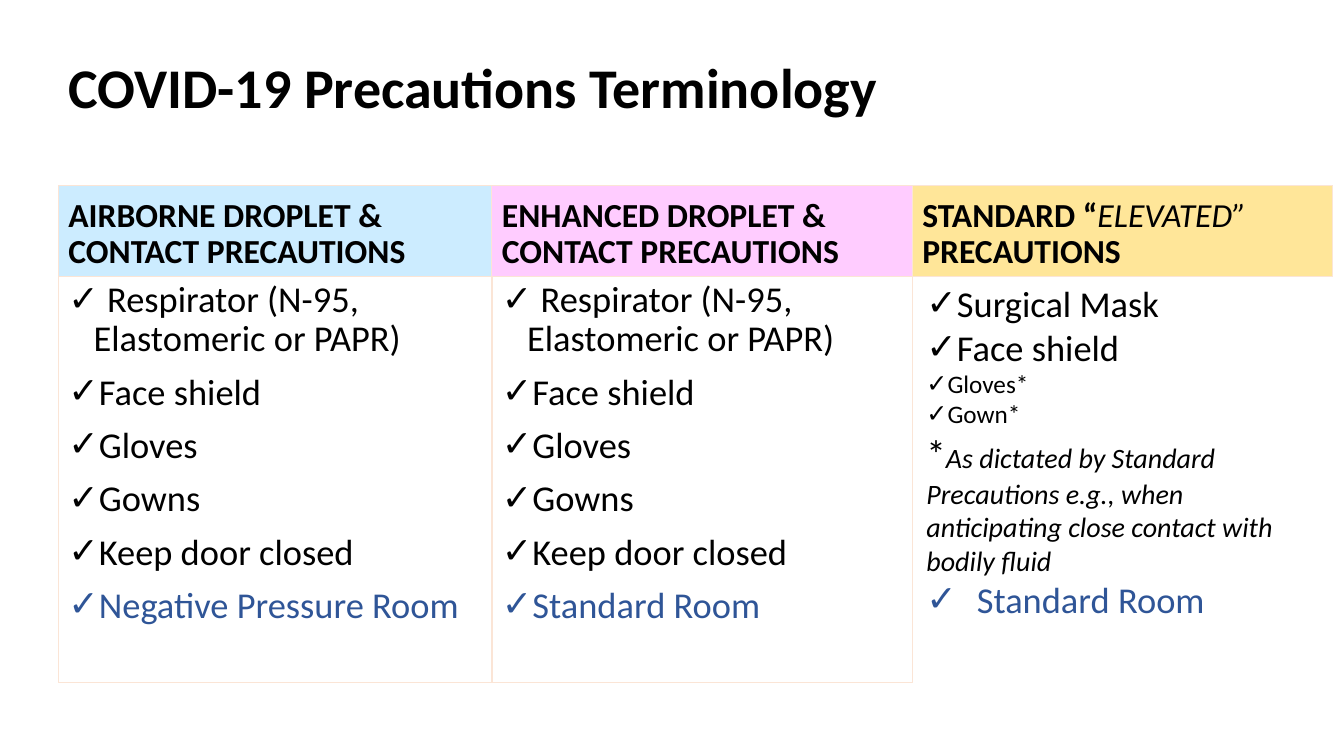
from dataclasses import dataclass

from lxml import etree
from pptx import Presentation
from pptx.dml.color import RGBColor
from pptx.enum.shapes import MSO_SHAPE
from pptx.enum.text import MSO_ANCHOR, PP_ALIGN
from pptx.oxml.ns import qn
from pptx.util import Inches, Pt

RECTANGLE = MSO_SHAPE.RECTANGLE
TOP, MIDDLE, BOTTOM = MSO_ANCHOR.TOP, MSO_ANCHOR.MIDDLE, MSO_ANCHOR.BOTTOM
LEFT = PP_ALIGN.LEFT


@dataclass(frozen=True)
class Theme:
    """Font, colours and type sizes of the slide."""
    font: str = "Calibri"
    ink: str = "000000"
    room: str = "2F5597"
    border: str = "FBE5D6"
    airborne: str = "CCECFF"
    enhanced: str = "FFCCFF"
    standard: str = "FFE699"
    title: int = 40
    heading: int = 24
    item: int = 26
    asterisk: int = 28
    note: int = 20
    minor: int = 18


THEME = Theme()
HEADING_TOP, HEADING_HEIGHT = 1.84, 0.9
LIST_TOP, LIST_HEIGHT = HEADING_TOP + HEADING_HEIGHT, 4.03
SHARED_ITEMS = [" Respirator (N-95, Elastomeric or PAPR)", "Face shield",
                "Gloves", "Gowns", "Keep door closed"]
COLUMNS = [
    (0.58, 4.31, THEME.airborne, "AIRBORNE DROPLET & CONTACT PRECAUTIONS",
     "Negative Pressure Room"),
    (4.88, 4.17, THEME.enhanced, "ENHANCED DROPLET & CONTACT PRECAUTIONS",
     "Standard Room"),
]


def add_span(para, text, size=THEME.item, color=THEME.ink, bold=False, italic=False):
    """Add formatted text to a paragraph."""
    span = para.add_run()
    span.text = text
    font = span.font
    font.name, font.size = THEME.font, Pt(size)
    font.bold, font.italic = bold, italic
    font.color.rgb = RGBColor.from_string(color)


def add_para(frame, spacing=0.9, before=10, check=False, hanging=0):
    """Add a paragraph, with a check-mark bullet if asked."""
    first = frame.paragraphs[0]
    para = frame.add_paragraph() if first.runs else first
    para.alignment = LEFT
    para.line_spacing, para.space_before = spacing, Pt(before)
    if check:
        properties = para._p.get_or_add_pPr()
        properties.set("marL", str(Inches(hanging)))
        properties.set("indent", str(-Inches(hanging)))
        etree.SubElement(properties, qn("a:buFont")).set("typeface", THEME.font)
        etree.SubElement(properties, qn("a:buChar")).set("char", "✓")
    return para


def add_text_box(page, left, top, width, height, anchor=TOP):
    """Add a wrapping text box and return its text frame."""
    frame = page.shapes.add_textbox(*map(Inches, (left, top, width, height))).text_frame
    frame.word_wrap, frame.vertical_anchor = True, anchor
    return frame


def add_cell(page, left, top, width, height, fill=None, anchor=TOP):
    """Add a bordered rectangle and return its text frame."""
    box = page.shapes.add_shape(RECTANGLE, *map(Inches, (left, top, width, height)))
    box.shadow.inherit = False
    if fill:
        box.fill.solid()
        box.fill.fore_color.rgb = RGBColor.from_string(fill)
    else:
        box.fill.background()
    box.line.color.rgb = RGBColor.from_string(THEME.border)
    box.line.width = Pt(0.75)
    box.text_frame.word_wrap, box.text_frame.vertical_anchor = True, anchor
    return box.text_frame


def add_heading(page, left, width, fill):
    """Add a column heading and return its paragraph."""
    return add_para(add_cell(page, left, HEADING_TOP, width, HEADING_HEIGHT, fill, BOTTOM))


def add_column(page, left, width, fill, heading, room):
    """Add a heading with its bordered checklist."""
    add_span(add_heading(page, left, width, fill), heading, size=THEME.heading, bold=True)
    frame = add_cell(page, left, LIST_TOP, width, LIST_HEIGHT)
    for item in SHARED_ITEMS:
        add_span(add_para(frame, check=True, hanging=0.25), item)
    add_span(add_para(frame, check=True, hanging=0.25), room, color=THEME.room)


def add_standard_column(page):
    """Add the standard precautions heading, checklist and note."""
    heading = add_heading(page, 9.05, 4.17, THEME.standard)
    add_span(heading, "STANDARD “", size=THEME.heading, bold=True)
    add_span(heading, "ELEVATED” ", size=THEME.heading, italic=True)
    add_span(heading, "PRECAUTIONS", size=THEME.heading, bold=True)

    frame = add_text_box(page, 9.09, LIST_TOP, 4.14, 4.07)
    for item, size in [("Surgical Mask", THEME.item), ("Face shield", THEME.item),
                       ("Gloves*", THEME.minor), ("Gown*", THEME.minor)]:
        add_span(add_para(frame, spacing=1.0, before=0, check=True), item, size=size)
    note = add_para(frame, spacing=1.0, before=0)
    add_span(note, "*", size=THEME.asterisk)
    add_span(note, "As dictated by Standard Precautions e.g., when anticipating "
             "close contact with bodily fluid", size=THEME.note, italic=True)
    room = add_para(frame, spacing=1.0, before=0, check=True, hanging=0.5)
    add_span(room, "Standard Room", color=THEME.room)


def main():
    """Build and save the slide."""
    deck = Presentation()
    deck.slide_width, deck.slide_height = Inches(13.33), Inches(7.5)
    page = deck.slides.add_slide(deck.slide_layouts[6])
    title = add_para(add_text_box(page, 0.58, 0.4, 11.5, 0.99, MIDDLE), before=0)
    add_span(title, "COVID-19 Precautions Terminology", size=THEME.title, bold=True)
    for column in COLUMNS:
        add_column(page, *column)
    add_standard_column(page)
    deck.save("out.pptx")


if __name__ == "__main__":
    main()
